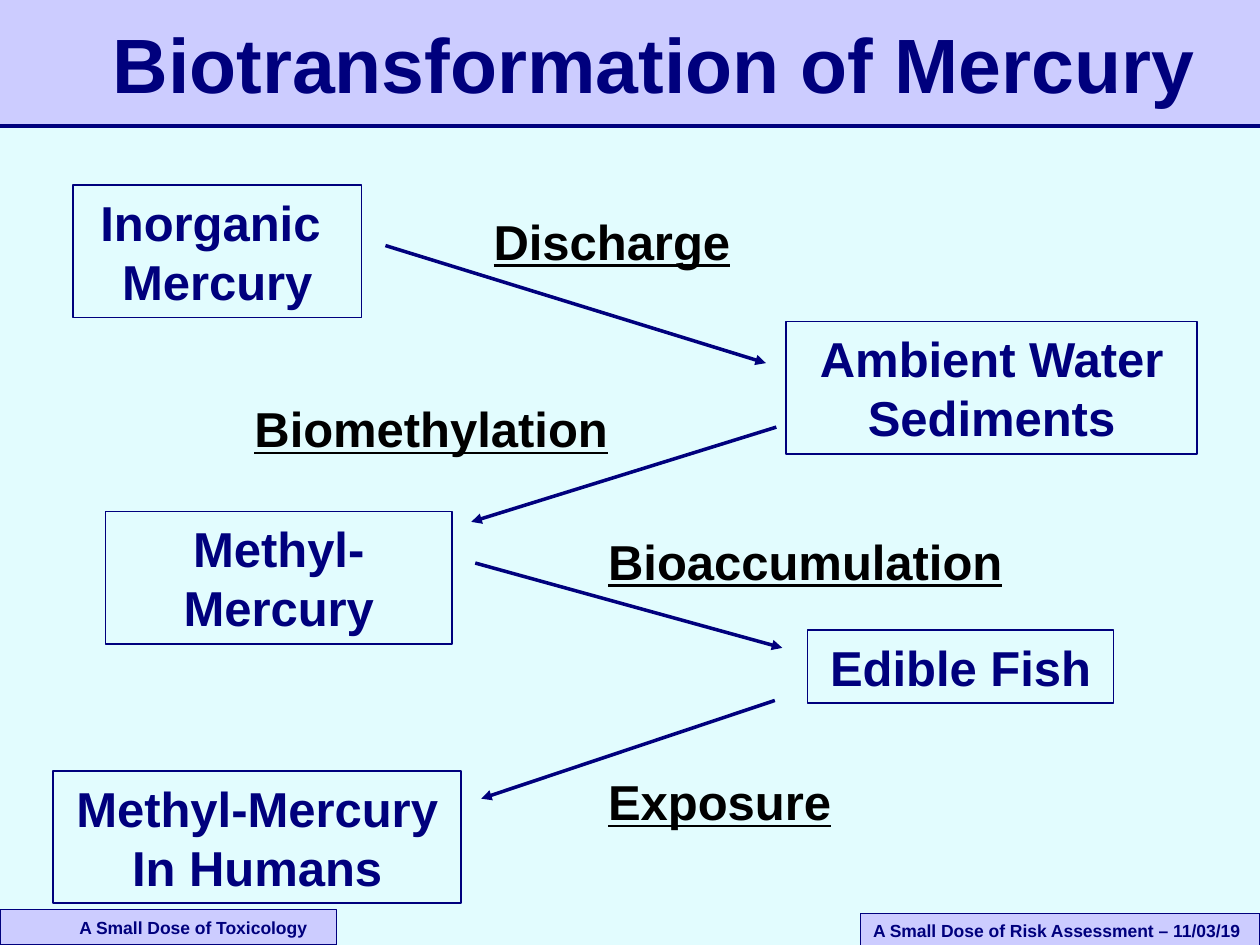
from lxml import etree
from pptx import Presentation
from pptx.dml.color import RGBColor
from pptx.enum import shapes, text
from pptx.oxml import ns
from pptx.util import Cm, Pt

COLORS = {"background": "E2FCFE", "band": "CCCCFF", "navy": "00007D", "black": "000000"}
LEFT, CENTER, RIGHT = text.PP_ALIGN.LEFT, text.PP_ALIGN.CENTER, text.PP_ALIGN.RIGHT


def add_box(bounds, lines, font, align=LEFT, fill=None, border=None, inset=0.25):
    """Add a rectangle, or a plain text box when it has no fill and no border."""
    bounds = [Cm(length) for length in bounds]
    if fill or border:
        shape = slide.shapes.add_shape(shapes.MSO_SHAPE.RECTANGLE, *bounds)
        shape.shadow.inherit = False
        if fill:
            shape.fill.solid()
            shape.fill.fore_color.rgb = RGBColor.from_string(COLORS[fill])
        else:
            shape.fill.background()
        if border:
            shape.line.color.rgb = RGBColor.from_string(COLORS["navy"])
            shape.line.width = Pt(border)
        else:
            shape.line.fill.background()
    else:
        shape = slide.shapes.add_textbox(*bounds)
    frame = shape.text_frame
    frame_format = {
        "word_wrap": True,
        "vertical_anchor": text.MSO_ANCHOR.MIDDLE,
        "margin_left": Cm(inset),
        "margin_right": Cm(0.25),
        "margin_top": Cm(0.13),
        "margin_bottom": Cm(0.13),
    }
    for name, value in frame_format.items():
        setattr(frame, name, value)
    for index, line in enumerate(lines):
        paragraph = frame.add_paragraph() if index else frame.paragraphs[0]
        paragraph.alignment = align
        run = paragraph.add_run()
        run.text = line
        for name, value in {"name": "Arial", "bold": True, **font}.items():
            if name == "color":
                run.font.color.rgb = RGBColor.from_string(COLORS[value])
            else:
                setattr(run.font, name, value)


def add_line(start, end, arrow=True):
    connector = slide.shapes.add_connector(
        shapes.MSO_CONNECTOR.STRAIGHT, *[Cm(length) for length in start + end]
    )
    connector.line.color.rgb = RGBColor.from_string(COLORS["navy"])
    connector.line.width = Pt(2)
    if arrow:
        etree.SubElement(connector.line._get_or_add_ln(), ns.qn("a:tailEnd"), type="triangle")
    etree.SubElement(connector._element.spPr, ns.qn("a:effectLst"))


presentation = Presentation()
presentation.slide_width = Cm(25.4)
presentation.slide_height = Cm(19.05)
slide = presentation.slides.add_slide(presentation.slide_layouts[6])
slide.background.fill.solid()
slide.background.fill.fore_color.rgb = RGBColor.from_string(COLORS["background"])

title_font = {"size": Pt(44), "color": "navy"}
footer_font = {"size": Pt(10), "color": "navy"}
stage_font = {"size": Pt(28), "color": "navy"}
process_font = {"size": Pt(28), "color": "black", "underline": True}

# Header band and title
add_box((0, 0, 25.4, 2.54), [], {}, fill="band")
add_line((0, 2.54), (25.4, 2.54), arrow=False)
add_box((1.07, 0.2, 23.29, 2.11), ["Biotransformation of Mercury"], title_font, RIGHT)

# Footers
footers = [
    ((17.35, 18.42, 8.05, 0.69), "A Small Dose of Risk Assessment – 11/03/19", 0.25),
    ((0, 18.34, 6.78, 0.71), "A Small Dose of Toxicology", 1.6),
]
for bounds, footer, inset in footers:
    add_box(bounds, [footer], footer_font, fill="band", border=0.75, inset=inset)

# Stages of the mercury pathway
stages = [
    ((1.47, 3.73, 5.82, 2.67), ["Inorganic ", "Mercury"]),
    ((15.85, 6.48, 8.28, 2.67), ["Ambient Water", "Sediments"]),
    ((2.13, 10.31, 6.98, 2.67), ["Methyl-Mercury"]),
    ((16.28, 12.7, 6.17, 1.47), ["Edible Fish"]),
    ((1.07, 15.54, 8.23, 2.67), ["Methyl-Mercury", "In Humans"]),
]
for bounds, lines in stages:
    add_box(bounds, lines, stage_font, CENTER, border=1)

# Processes that lead from one stage to the next
processes = [
    ("Discharge", (9.7, 4.14, 5.97, 1.42), (7.77, 4.95), (15.44, 7.32)),
    ("Biomethylation", (4.88, 7.92, 8.05, 1.42), (15.65, 8.61), (9.5, 10.52)),
    ("Bioaccumulation", (12.01, 10.59, 8.94, 1.42), (9.58, 11.35), (15.77, 13.06)),
    ("Exposure", (12.01, 15.44, 5.36, 1.42), (15.62, 14.12), (9.7, 16.1)),
]
for process, bounds, start, end in processes:
    add_line(start, end)
    add_box(bounds, [process], process_font)

presentation.save("out.pptx")
